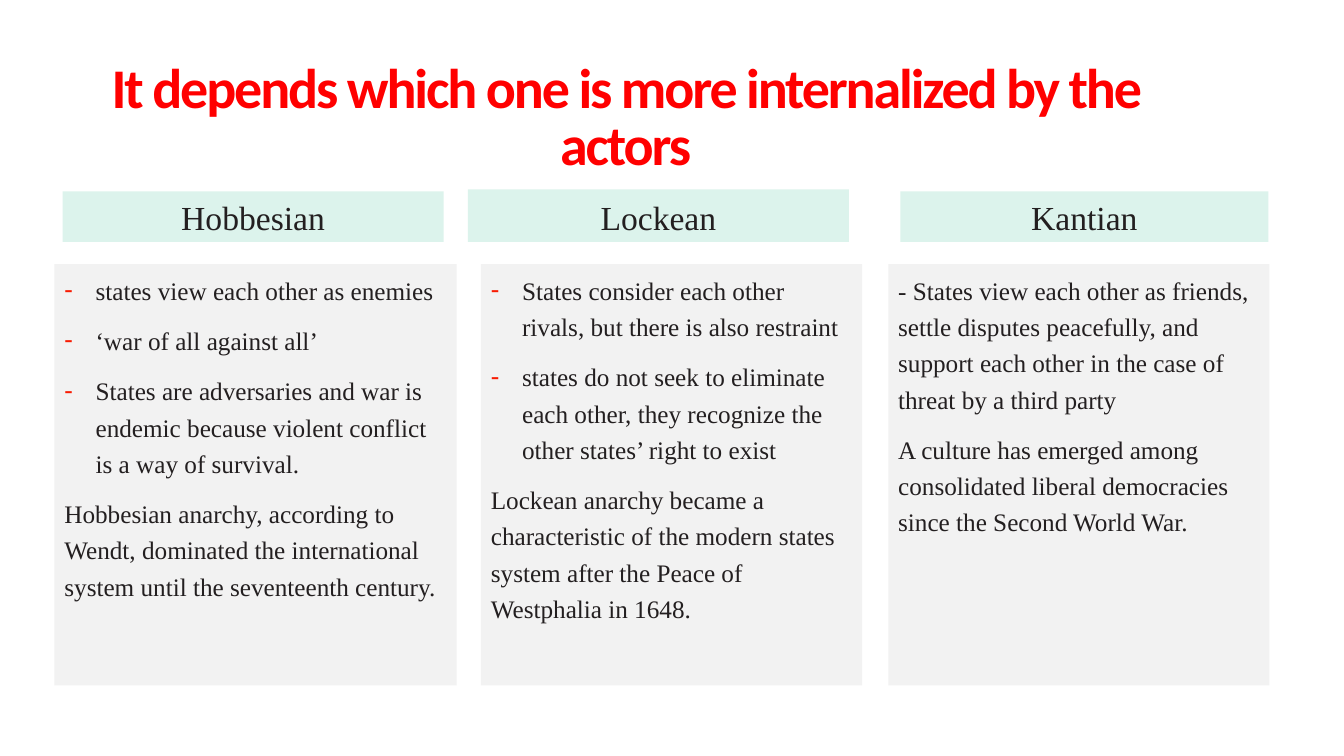
from lxml import etree
from pptx import Presentation
from pptx import util as u
from pptx.dml.color import RGBColor
from pptx.enum import shapes, text
from pptx.oxml.ns import qn

TITLE = "It depends which one is more internalized by the actors"
COLUMNS = [
    {
        "name": "Hobbesian", "head": (0.62, 1.9, 3.78), "body": (0.54, 3.99),
        "bullets": [
            "states view each other as enemies",
            "‘war of all against all’",
            "States are adversaries and war is endemic because violent conflict is a way of survival.",
        ],
        "plain": ["Hobbesian anarchy, according to Wendt, dominated the international system until the seventeenth century."],
    },
    {
        "name": "Lockean", "head": (4.64, 1.88, 3.78), "body": (4.77, 3.78),
        "bullets": [
            "States consider each other rivals, but there is also restraint",
            "states do not seek to eliminate each other, they recognize the other states’ right to exist",
        ],
        "plain": ["Lockean anarchy became a characteristic of the modern states system after the Peace of Westphalia in 1648."],
    },
    {
        "name": "Kantian", "head": (8.93, 1.9, 3.65), "body": (8.81, 3.78),
        "bullets": [],
        "plain": [
            "- States view each other as friends, settle disputes peacefully, and support each other in the case of threat by a third party",
            "A culture has emerged among consolidated liberal democracies since the Second World War.",
        ],
    },
]
COLORS = {"title": "FF0000", "head": "DCF3EC", "body": "F2F2F2", "text": "231F20", "bullet": "F81B02"}
HEAD_BOTTOM, BODY_TOP, BODY_HEIGHT, INDENT = 2.4, 2.62, 4.18, 0.31


def color(name):
    return RGBColor.from_string(COLORS[name])


def add_span(para, words, font, size, tint):
    span = para.add_run()
    span.text = words
    span.font.name = font
    span.font.size = u.Pt(size)
    span.font.color.rgb = color(tint)
    return span


def add_bullet(para):
    props = para._p.get_or_add_pPr()
    props.set("marL", str(u.Inches(INDENT)))
    props.set("indent", str(-u.Inches(INDENT)))
    tint = etree.SubElement(props, qn("a:buClr"))
    etree.SubElement(tint, qn("a:srgbClr"), val=COLORS["bullet"])
    etree.SubElement(props, qn("a:buSzPct"), val="110000")
    etree.SubElement(props, qn("a:buFont"), typeface="Calibri")
    etree.SubElement(props, qn("a:buChar"), char="-")


def add_panel(page, place, fill, anchor, align, size, lines):
    box = page.shapes.add_shape(shapes.MSO_SHAPE.RECTANGLE, *map(u.Inches, place))
    box.shadow.inherit = False
    box.fill.solid()
    box.fill.fore_color.rgb = color(fill)
    box.line.fill.background()
    frame = box.text_frame
    frame.word_wrap = True
    frame.vertical_anchor = anchor
    for index, (words, bulleted) in enumerate(lines):
        para = frame.add_paragraph() if index else frame.paragraphs[0]
        para.alignment = align
        para.line_spacing = 1.2
        para.space_before = u.Pt(10)
        if bulleted:
            add_bullet(para)
        add_span(para, words, "Times New Roman", size, "text")


def add_title(page):
    title = page.shapes.title
    title.left, title.top, title.width, title.height = map(u.Inches, (0.23, 0.47, 11.95, 1.43))
    frame = title.text_frame
    frame.word_wrap = True
    frame.auto_size = text.MSO_AUTO_SIZE.NONE
    frame.vertical_anchor = text.MSO_ANCHOR.MIDDLE
    frame.margin_left = frame.margin_right = frame.margin_top = frame.margin_bottom = u.Inches(0.25)
    para = frame.paragraphs[0]
    para.alignment = text.PP_ALIGN.CENTER
    para.line_spacing = 0.85
    span = add_span(para, TITLE, "Calibri", 40, "title")
    span.font.bold = True
    span._r.get_or_add_rPr().set("spc", "-150")


def main():
    deck = Presentation()
    deck.slide_width, deck.slide_height = u.Inches(13.33), u.Inches(7.5)
    page = deck.slides.add_slide(deck.slide_layouts[5])
    add_title(page)
    for column in COLUMNS:
        left, top, width = column["head"]
        add_panel(page, (left, top, width, HEAD_BOTTOM - top), "head", text.MSO_ANCHOR.BOTTOM,
                  text.PP_ALIGN.CENTER, 24, [(column["name"], False)])
        left, width = column["body"]
        lines = [(words, True) for words in column["bullets"]]
        lines += [(words, False) for words in column["plain"]]
        add_panel(page, (left, BODY_TOP, width, BODY_HEIGHT), "body", text.MSO_ANCHOR.TOP,
                  text.PP_ALIGN.LEFT, 18, lines)
    deck.save("out.pptx")


if __name__ == "__main__":
    main()
